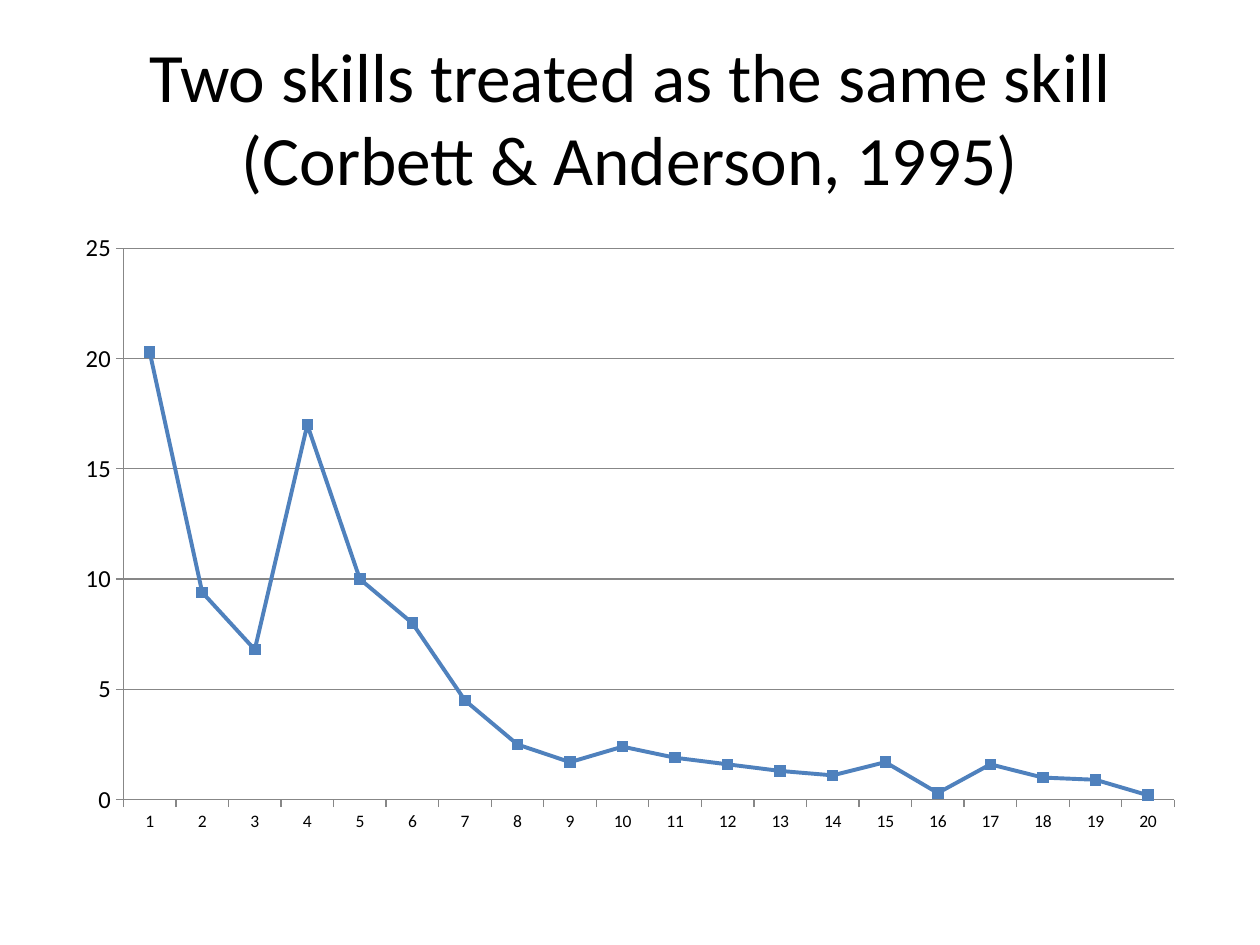
from dataclasses import dataclass
from typing import Any, NamedTuple

from pptx import Presentation
from pptx import util as u
from pptx.chart.data import CategoryChartData
from pptx.dml.color import RGBColor
from pptx.enum import chart as charts, text


@dataclass(frozen=True)
class Theme:
    font: str = "Calibri"
    ink: RGBColor = RGBColor(0x00, 0x00, 0x00)
    axis: RGBColor = RGBColor(0x87, 0x87, 0x87)
    series: RGBColor = RGBColor(0x4F, 0x81, 0xBD)
    title_size: float = 39.6
    category_size: float = 10
    value_size: float = 14
    axis_width: float = 0.75
    series_width: float = 2.25
    marker_size: int = 6


class Box(NamedTuple):
    left: float
    top: float
    width: float
    height: float

    def lengths(self) -> list[u.Length]:
        return [u.Cm(value) for value in self]


THEME = Theme()
TITLE_BOX = Box(1.27, 0.76, 22.86, 3.18)
CHART_BOX = Box(1.27, 4.45, 22.86, 12.57)
TITLE_LINES = ["Two skills treated as the same skill", "(Corbett & Anderson, 1995)"]
VALUES = [20.3, 9.4, 6.8, 17, 10, 8, 4.5, 2.5, 1.7, 2.4,
          1.9, 1.6, 1.3, 1.1, 1.7, 0.3, 1.6, 1, 0.9, 0.2]


def apply(target: Any, formats: dict[str, Any]) -> None:
    for name, value in formats.items():
        setattr(target, name, value)


def style_font(font: Any, size: float) -> None:
    apply(font, {"name": THEME.font, "size": u.Pt(size), "bold": False})
    font.color.rgb = THEME.ink


def style_line(line: Any, color: RGBColor, width: float) -> None:
    line.color.rgb = color
    line.width = u.Pt(width)


def add_title(slide: Any, box: Box, lines: list[str]) -> None:
    frame = slide.shapes.add_textbox(*box.lengths()).text_frame
    apply(frame, {"word_wrap": True, "vertical_anchor": text.MSO_ANCHOR.MIDDLE})
    paragraph = frame.paragraphs[0]
    paragraph.alignment = text.PP_ALIGN.CENTER
    for index, line in enumerate(lines):
        if index:
            paragraph.add_line_break()
        run = paragraph.add_run()
        run.text = line
        style_font(run.font, THEME.title_size)


def style_axis(axis: Any, size: float, formats: dict[str, Any]) -> None:
    apply(axis, {"major_tick_mark": charts.XL_TICK_MARK.OUTSIDE,
                 "minor_tick_mark": charts.XL_TICK_MARK.NONE, **formats})
    style_font(axis.tick_labels.font, size)
    style_line(axis.format.line, THEME.axis, THEME.axis_width)


def add_line_chart(slide: Any, box: Box, values: list[float]) -> None:
    data = CategoryChartData()
    data.categories = [str(number) for number in range(1, len(values) + 1)]
    data.add_series("Series 1", values)
    chart = slide.shapes.add_chart(
        charts.XL_CHART_TYPE.LINE_MARKERS, *box.lengths(), data).chart
    apply(chart, {"has_legend": False, "has_title": False})
    style_font(chart.font, THEME.category_size)

    # Axes and gridlines
    style_axis(chart.category_axis, THEME.category_size, {"has_major_gridlines": False})
    style_axis(chart.value_axis, THEME.value_size, {
        "has_major_gridlines": True, "minimum_scale": 0,
        "maximum_scale": 25, "major_unit": 5})
    style_line(chart.value_axis.major_gridlines.format.line, THEME.axis, THEME.axis_width)

    # Line and markers
    plot = chart.plots[0]
    plot.vary_by_categories = False
    series = plot.series[0]
    series.smooth = False
    style_line(series.format.line, THEME.series, THEME.series_width)
    apply(series.marker, {"style": charts.XL_MARKER_STYLE.SQUARE,
                          "size": THEME.marker_size})
    series.marker.format.fill.solid()
    series.marker.format.fill.fore_color.rgb = THEME.series
    style_line(series.marker.format.line, THEME.series, THEME.axis_width)


def main() -> None:
    presentation = Presentation()
    apply(presentation, {"slide_width": u.Cm(25.4), "slide_height": u.Cm(19.05)})
    slide = presentation.slides.add_slide(presentation.slide_layouts[6])
    add_title(slide, TITLE_BOX, TITLE_LINES)
    add_line_chart(slide, CHART_BOX, VALUES)
    presentation.save("out.pptx")


if __name__ == "__main__":
    main()
